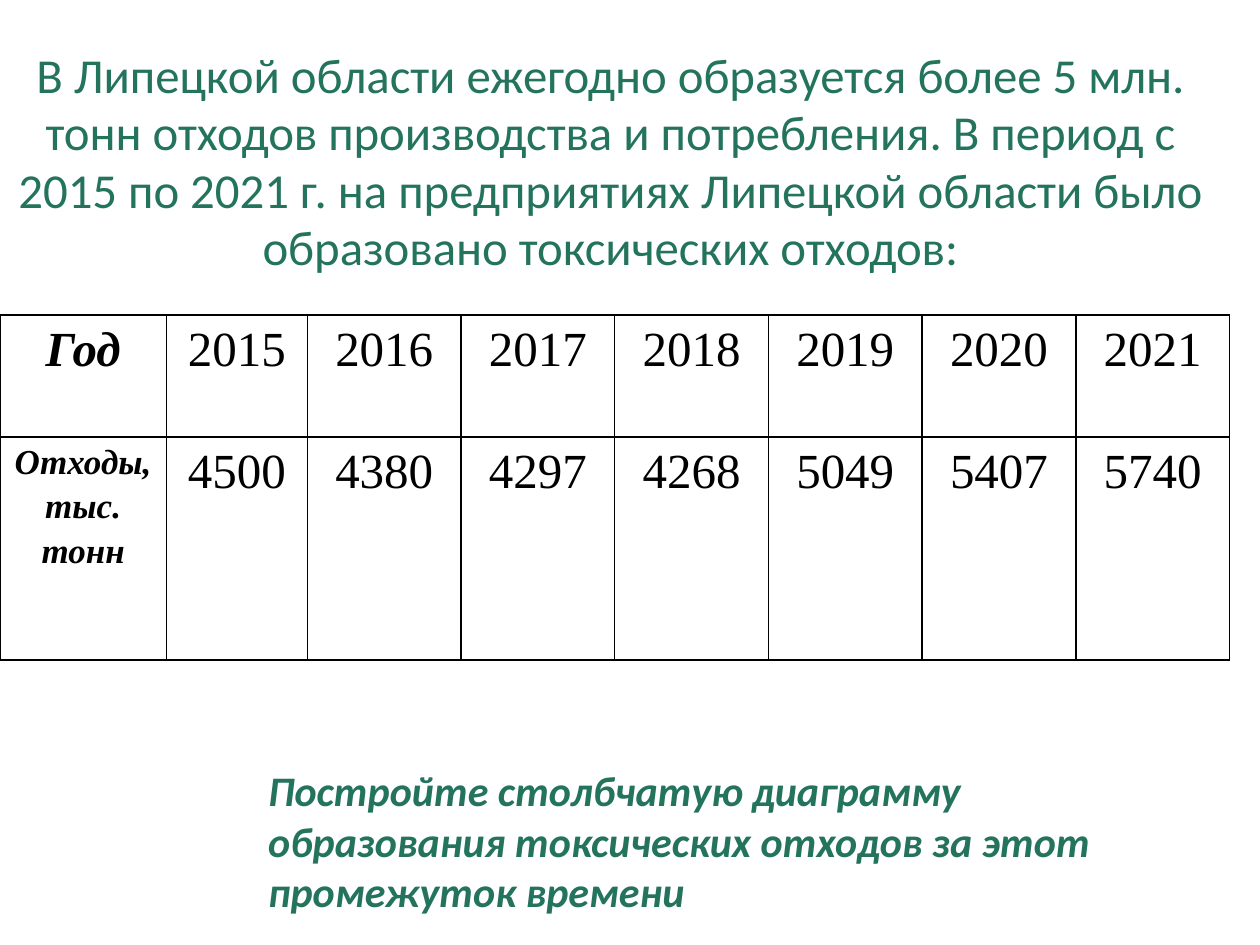
from lxml import etree
from pptx import Presentation
from pptx.dml.color import RGBColor
from pptx.enum.text import MSO_ANCHOR, PP_ALIGN
from pptx.oxml.ns import qn
from pptx.util import Inches, Pt

CENTER, LEFT = PP_ALIGN.CENTER, PP_ALIGN.LEFT
TOP, BOTTOM = MSO_ANCHOR.TOP, MSO_ANCHOR.BOTTOM
WIDE, HIGH = Inches(10), Inches(7.5)
GREEN, BLACK = "23735D", "000000"


def color(code):
    return RGBColor.from_string(code)


class Page:
    """Style and current slide; lengths are shares of the slide's size."""
    font, serif = "Calibri", "Times New Roman"

    def __init__(self, deck):
        self.slide = deck.slides.add_slide(deck.slide_layouts[6])

    def box(self, x, y, w, h):
        return [round(v) for v in (x * WIDE, y * HIGH, w * WIDE, h * HIGH)]

    def style(self, par, face, size, code, bold=False):
        for run in par.runs:
            font = run.font
            font.name, font.size = face, Pt(size)
            font.bold = font.italic = bold
            font.color.rgb = color(code)

    def text(self, words, area, size, align=LEFT, anchor=TOP, bold=False,
             foot=0.05, pitch=1.0):
        frame = self.slide.shapes.add_textbox(*self.box(*area)).text_frame
        frame.text = words
        frame.word_wrap = True
        frame.vertical_anchor = anchor
        frame.margin_bottom = Inches(foot)
        par = frame.paragraphs[0]
        par.alignment, par.line_spacing = align, pitch
        self.style(par, self.font, size, GREEN, bold)

    def border(self, cell):
        props = cell._tc.get_or_add_tcPr()
        for n, side in enumerate(("lnL", "lnR", "lnT", "lnB")):
            line = etree.Element(qn("a:" + side), w=str(Pt(1)))
            fill = etree.SubElement(line, qn("a:solidFill"))
            etree.SubElement(fill, qn("a:srgbClr"), val=BLACK)
            props.insert(n, line)

    def cell(self, cell, words, size, bold):
        cell.text = words
        cell.fill.background()
        cell.margin_left = cell.margin_right = Inches(0.07)
        cell.margin_top = cell.margin_bottom = 0
        par = cell.text_frame.paragraphs[0]
        par.alignment, par.line_spacing = CENTER, 1.15
        par.space_after = Pt(10)
        self.style(par, self.serif, size, BLACK, bold)
        self.border(cell)

    def table(self, rows, x, y, wides, highs):
        area = self.box(x, y, sum(wides), sum(highs))
        grid = self.slide.shapes.add_table(len(rows), len(wides), *area).table
        grid.first_row = grid.horz_banding = False
        for col, wide in zip(grid.columns, wides):
            col.width = round(wide * WIDE)
        for r, (row, high) in enumerate(zip(rows, highs)):
            grid.rows[r].height = round(high * HIGH)
            for c, words in enumerate(row):
                size = 20 if (r, c) == (1, 0) else 28
                self.cell(grid.cell(r, c), words, size, c == 0)


def main():
    deck = Presentation()
    deck.slide_width, deck.slide_height = WIDE, HIGH
    page = Page(deck)

    # Heading
    page.text("В Липецкой области ежегодно образуется более 5 млн. тонн "
              "отходов производства и потребления. В период с 2015 по 2021 г. "
              "на предприятиях Липецкой области было образовано токсических "
              "отходов:", (0, 1.09 / 7.5, 0.969, 1.34 / 7.5), 27.9,
              CENTER, BOTTOM, foot=0.23, pitch=0.98)

    # Waste by year
    years = [str(year) for year in range(2015, 2022)]
    waste = "4500 4380 4297 4268 5049 5407 5740".split()
    page.table([["Год"] + years, ["Отходы, тыс. тонн"] + waste], 0, 1 / 3,
               [0.132, 0.112] + [0.122] * 6, [0.97 / 7.5, 1.77 / 7.5])

    # Task
    page.text("Постройте столбчатую диаграмму образования токсических "
              "отходов за этот промежуток времени",
              (0.203, 6.02 / 7.5, 0.68, 1.31 / 7.5), 24, bold=True)

    deck.save("out.pptx")


if __name__ == "__main__":
    main()
